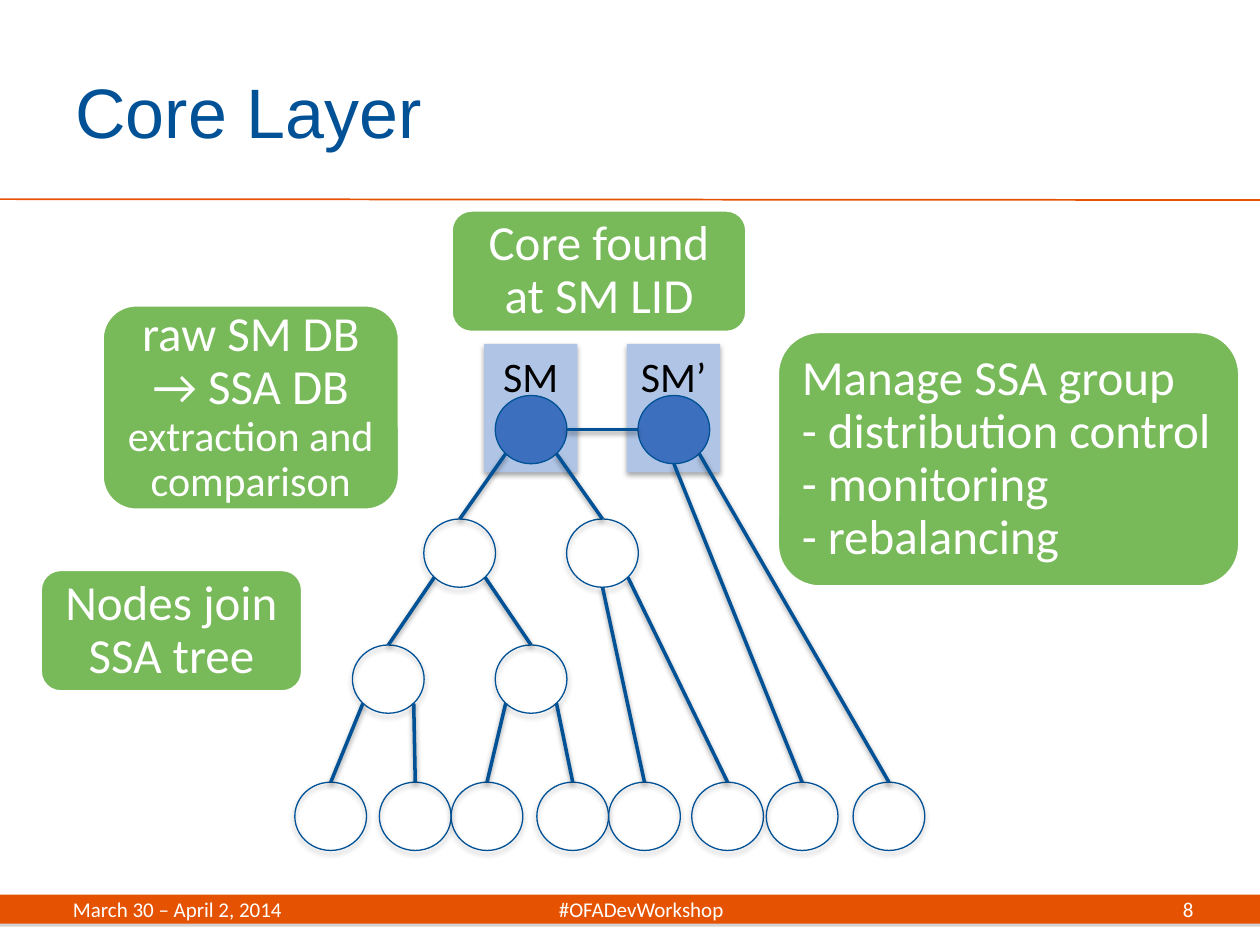
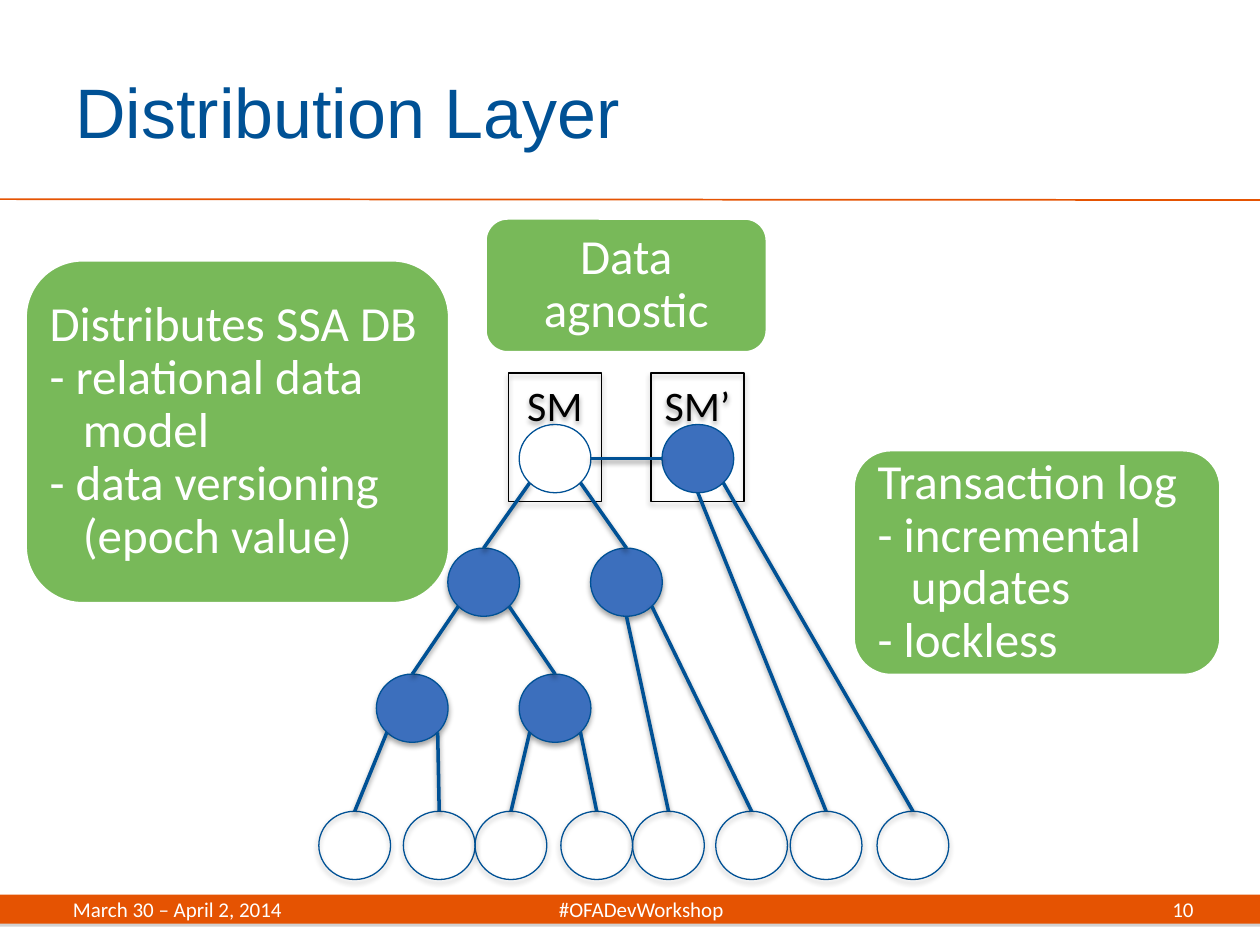
from lxml.etree import SubElement
from pptx import Presentation
from pptx.dml.color import RGBColor
from pptx.enum.shapes import MSO_CONNECTOR as Connector, MSO_SHAPE as Shape
from pptx.enum.text import MSO_ANCHOR as Anchor, PP_ALIGN as Align
from pptx.oxml.ns import qn
from pptx.util import Pt

# Shared look
WIDTH, HEIGHT = 720, 540
BLUE, NODE_BLUE, PALE_BLUE = "005195", "3C6FBD", "B0C5E6"
ORANGE, GREEN, GRAY = "E55302", "78B959", "808080"
WHITE, BLACK = "FFFFFF", "000000"
HEADING_FONT, BODY_FONT = "Arial", "Calibri"
FOOTER = "March 30 – April 2, 2014\t#OFADevWorkshop"
FOOTER_TAB = 324.7
BAND_TOP, BAND_HEIGHT = 511.2, 16.6
CALLOUT_PADDING = 14
ROUNDING_INSET = 0.0488  # share of the height taken by the round corners
DASH_INDENT = 19

# Tree: node name -> left and top, counted from the SM node
NODE_WIDTH, NODE_HEIGHT = 41, 39
HALF_STEP = 40.8
LEVEL_TOPS = [0, 70.6, 142.6, 221]
LEAF_LEFTS = [-114.5, -66.2, -25.2, 23.8, 64.8, 112.3, 154.9, 204.5]
NODES = {
    "SM": (0, LEVEL_TOPS[0]),
    "SM’": (2 * HALF_STEP, LEVEL_TOPS[0]),
    "left": (-HALF_STEP, LEVEL_TOPS[1]),
    "right": (HALF_STEP, LEVEL_TOPS[1]),
    "lower left": (-2 * HALF_STEP, LEVEL_TOPS[2]),
    "lower right": (0, LEVEL_TOPS[2]),
}
NODES |= {f"leaf {i}": (left, LEVEL_TOPS[3]) for i, left in enumerate(LEAF_LEFTS, 1)}

# Points on a node where links start or end, as shares of its size
PORTS = {"top": (0.5, 0), "bottom": (0.5, 1), "west": (0, 0.5), "east": (1, 0.5),
         "southwest": (0.146, 0.854), "southeast": (0.854, 0.854)}
LINKS = [
    ("SM", "southwest", "left", "top"),
    ("SM", "southeast", "right", "top"),
    ("SM", "east", "SM’", "west"),
    ("left", "southwest", "lower left", "top"),
    ("left", "southeast", "lower right", "top"),
    ("lower left", "southwest", "leaf 1", "top"),
    ("lower left", "southeast", "leaf 2", "top"),
    ("lower right", "southwest", "leaf 3", "top"),
    ("lower right", "southeast", "leaf 4", "top"),
    ("right", "bottom", "leaf 5", "top"),
    ("right", "southeast", "leaf 6", "top"),
    ("SM’", "bottom", "leaf 7", "top"),
    ("SM’", "southeast", "leaf 8", "top"),
]

# Callouts: place, alignment, lines as (text, size); "\v" breaks a line
SLIDES = [
    {"title": "Core Layer", "number": "8", "origin": (283, 226),
     "filled": {"SM", "SM’"}, "manager_fill": PALE_BLUE,
     "callouts": [
         ((23, 325.4, 150, 70), Align.CENTER, [[("Nodes join SSA tree", 28)]]),
         ((257.8, 120, 169, 70), Align.CENTER, [[("Core found at SM LID", 28)]]),
         ((58.3, 174.2, 170, 117.4), Align.CENTER,
          [[("raw SM DB\v→ SSA DB", 28), (" extraction and comparison", 24)]]),
         ((444.2, 189.4, 264.3, 146), Align.LEFT,
          [[("Manage SSA group", 28)], [("- distribution control", 28)],
           [("- monitoring", 28)], [("- rebalancing", 28)]]),
     ]},
    {"title": "Distribution Layer", "number": "10", "origin": (296.7, 242.6),
     "filled": {"SM’", "left", "right", "lower left", "lower right"},
     "manager_fill": None,
     "callouts": [
         ((487.5, 257, 210.2, 129), Align.LEFT,
          [[("Transaction log", 28)], [("- incremental updates", 28)],
           [("- lockless", 28)]]),
         ((277.2, 124.6, 161.3, 77), Align.CENTER, [[("Data agnostic", 28)]]),
         ((14.4, 148.5, 242.6, 196.5), Align.LEFT,
          [[("Distributes SSA DB", 28)], [("- relational data model", 28)],
           [("- data versioning (epoch value)", 28)]]),
     ]},
]


def rgb(color):
    return RGBColor.from_string(color)


def set_effects(shape, shadow=None):
    """Replace the theme shadow by none, or by (color, alpha %, blur, distance)."""
    effects = SubElement(shape._element.spPr, qn("a:effectLst"))
    if shadow:
        color, alpha, blur, distance = shadow
        outer = SubElement(effects, qn("a:outerShdw"), blurRad=str(Pt(blur)),
                           dist=str(Pt(distance)), dir="5400000", rotWithShape="0")
        tint = SubElement(outer, qn("a:srgbClr"), val=color)
        SubElement(tint, qn("a:alpha"), val=str(alpha * 1000))


def add_shape(slide, kind, place, fill=None, line=None, weight=0.75, shadow=None):
    shape = slide.shapes.add_shape(kind, *map(Pt, place))
    if fill:
        shape.fill.solid()
        shape.fill.fore_color.rgb = rgb(fill)
    else:
        shape.fill.background()
    if line:
        shape.line.color.rgb = rgb(line)
        shape.line.width = Pt(weight)
    else:
        shape.line.fill.background()
    set_effects(shape, shadow)
    return shape


def add_line(slide, start, end, color, weight, shadow=None):
    line = slide.shapes.add_connector(Connector.STRAIGHT, *map(Pt, (*start, *end)))
    line.line.color.rgb = rgb(color)
    line.line.width = Pt(weight)
    set_effects(line, shadow)


def set_frame(shape, anchor, side, vertical):
    frame = shape.text_frame
    frame.word_wrap = True
    frame.vertical_anchor = anchor
    frame.margin_left = frame.margin_right = Pt(side)
    frame.margin_top = frame.margin_bottom = Pt(vertical)
    return frame


def add_run(paragraph, text, size, color, font=BODY_FONT):
    """Add text as a run for each line, with line breaks between them."""
    for index, part in enumerate(text.split("\v")):
        if index:
            paragraph.add_line_break()
        run = paragraph.add_run()
        run.text = part
        run.font.name, run.font.size = font, Pt(size)
        run.font.color.rgb = rgb(color)


def add_label(slide, place, text, size, color, font=BODY_FONT, align=Align.LEFT, tab=None):
    box = slide.shapes.add_textbox(*map(Pt, place))
    paragraph = set_frame(box, Anchor.MIDDLE, 7.2, 0).paragraphs[0]
    paragraph.alignment = align
    if tab:
        tabs = SubElement(paragraph._p.get_or_add_pPr(), qn("a:tabLst"))
        SubElement(tabs, qn("a:tab"), pos=str(Pt(tab)), algn="ctr")
    add_run(paragraph, text, size, color, font)


def add_base(slide, title, number):
    """Band, rule, title and footer."""
    add_shape(slide, Shape.RECTANGLE, (0, BAND_TOP, WIDTH, BAND_HEIGHT), ORANGE,
              shadow=(GRAY, 35, 0, 1.8))
    add_line(slide, (0, 113.8), (WIDTH, 114.3), ORANGE, 1)
    add_label(slide, (36, 18, 588, 90), title, 40, BLUE, HEADING_FONT)
    add_label(slide, (34.6, BAND_TOP, 651.6, BAND_HEIGHT), FOOTER, 12, WHITE, tab=FOOTER_TAB)
    add_label(slide, (603.4, BAND_TOP, 85.7, BAND_HEIGHT), number, 12, WHITE,
              align=Align.RIGHT)


def add_tree(slide, origin, filled, manager_fill):
    def locate(name, port=(0, 0)):
        return (origin[0] + NODES[name][0] + port[0] * NODE_WIDTH,
                origin[1] + NODES[name][1] + port[1] * NODE_HEIGHT)

    shadow = (BLACK, 35, 3.1, 1.8)
    managers = ("SM", "SM’")
    # Subnet manager boxes behind the two roots
    for name in managers:
        left, top = locate(name)
        box = add_shape(slide, Shape.RECTANGLE, (left - 6.3, top - 29.5, 53.3, 73.4),
                        manager_fill, None if manager_fill else BLACK, shadow=shadow)
        paragraph = set_frame(box, Anchor.TOP, 0, 3.6).paragraphs[0]
        paragraph.alignment = Align.CENTER
        add_run(paragraph, name, 24, BLACK)
    # Nodes
    for name in NODES:
        add_shape(slide, Shape.OVAL, (*locate(name), NODE_WIDTH, NODE_HEIGHT),
                  NODE_BLUE if name in filled else None, BLUE,
                  shadow=None if name in managers else shadow)
    # Links
    for parent, start, child, end in LINKS:
        add_line(slide, locate(parent, PORTS[start]), locate(child, PORTS[end]),
                 BLUE, 2, (BLACK, 38, 3.1, 1.6))


def add_callout(slide, place, align, lines):
    box = add_shape(slide, Shape.ROUNDED_RECTANGLE, place, GREEN, WHITE, 2)
    inset = ROUNDING_INSET * min(place[2:])
    frame = set_frame(box, Anchor.MIDDLE, CALLOUT_PADDING - inset, 5)
    for index, runs in enumerate(lines):
        paragraph = frame.add_paragraph() if index else frame.paragraphs[0]
        paragraph.alignment = align
        paragraph.line_spacing = 0.9
        if runs[0][0].startswith("- "):
            properties = paragraph._p.get_or_add_pPr()
            properties.set("marL", str(Pt(DASH_INDENT)))
            properties.set("indent", str(-Pt(DASH_INDENT)))
        for text, size in runs:
            add_run(paragraph, text, size, WHITE)


def main():
    presentation = Presentation()
    presentation.slide_width, presentation.slide_height = Pt(WIDTH), Pt(HEIGHT)
    for content in SLIDES:
        slide = presentation.slides.add_slide(presentation.slide_layouts[6])
        add_base(slide, content["title"], content["number"])
        add_tree(slide, content["origin"], content["filled"], content["manager_fill"])
        for callout in content["callouts"]:
            add_callout(slide, *callout)
    presentation.save("out.pptx")


if __name__ == "__main__":
    main()
